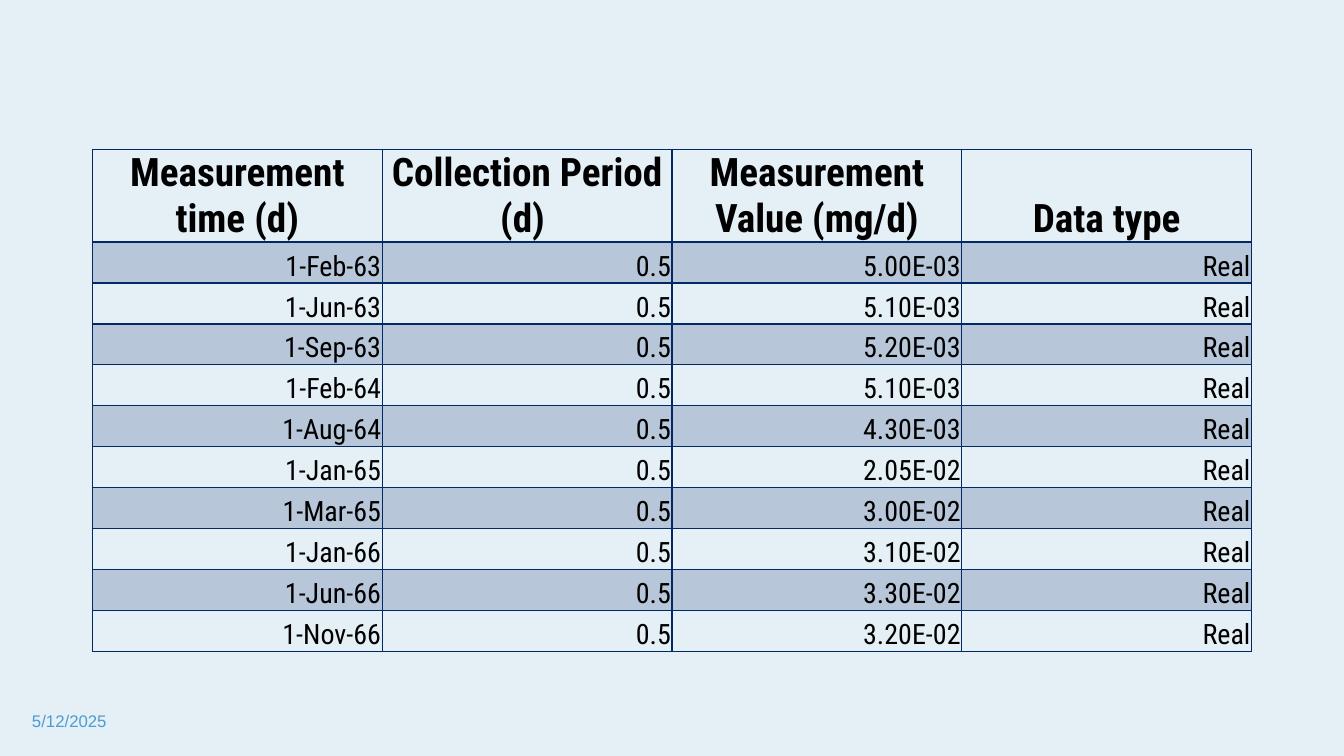
import dataclasses

import lxml.etree
import pptx
import pptx.dml.color
import pptx.enum.text
import pptx.oxml
import pptx.oxml.ns
import pptx.util

Pt = pptx.util.Pt
Align = pptx.enum.text.PP_ALIGN
Anchor = pptx.enum.text.MSO_ANCHOR


@dataclasses.dataclass(frozen=True)
class Theme:
    background: str = "E5EFF6"
    navy: str = "002966"
    text: str = "000000"
    date: str = "4B9CD3"
    table_font: str = "Roboto Condensed"
    date_font: str = "Arial"
    header_size: int = 28
    body_size: int = 20
    date_size: int = 12
    band_opacity: int = 20


def color(code):
    return pptx.dml.color.RGBColor.from_string(code)


class PageBuilder:
    def __init__(self, page, theme):
        self.page = page
        self.theme = theme
        page.background.fill.solid()
        page.background.fill.fore_color.rgb = color(theme.background)

    def style(self, para, font, size, code, bold=False):
        for span in para.runs:
            span.font.name = font
            span.font.size = Pt(size)
            span.font.bold = bold
            span.font.color.rgb = color(code)

    def text(self, words, left, top, width, height):
        box = self.page.shapes.add_textbox(Pt(left), Pt(top), Pt(width), Pt(height))
        frame = box.text_frame
        frame.word_wrap = True
        frame.vertical_anchor = Anchor.MIDDLE
        frame.text = words
        self.style(frame.paragraphs[0], self.theme.date_font,
                   self.theme.date_size, self.theme.date)

    def borders(self, cell, widths):
        properties = cell._tc.get_or_add_tcPr()
        for position, (side, width) in enumerate(widths.items()):
            line = pptx.oxml.parse_xml(
                f'<a:ln{side} {pptx.oxml.ns.nsdecls("a")} w="{Pt(width)}">'
                f'<a:solidFill><a:srgbClr val="{self.theme.navy}"/></a:solidFill>'
                f'</a:ln{side}>')
            properties.insert(position, line)

    def band(self, cell):
        cell.fill.solid()
        cell.fill.fore_color.rgb = color(self.theme.navy)
        tint = cell._tc.tcPr.find(".//" + pptx.oxml.ns.qn("a:srgbClr"))
        alpha = lxml.etree.SubElement(tint, pptx.oxml.ns.qn("a:alpha"))
        alpha.set("val", str(self.theme.band_opacity * 1000))

    def cell(self, cell, words, row):
        header = row == 0
        cell.text = words
        cell.vertical_anchor = Anchor.BOTTOM
        cell.margin_left = cell.margin_right = cell.margin_top = Pt(0.75)
        cell.margin_bottom = 0
        para = cell.text_frame.paragraphs[0]
        para.alignment = Align.CENTER if header else Align.RIGHT
        size = self.theme.header_size if header else self.theme.body_size
        self.style(para, self.theme.table_font, size, self.theme.text, header)
        if row % 2:
            self.band(cell)
        else:
            cell.fill.background()
        self.borders(cell, {"L": 1, "R": 1, "T": 2 if row == 1 else 1,
                            "B": 2 if header else 1})

    def table(self, rows, left, top, column_width, header_height, row_height):
        columns = len(rows[0])
        height = header_height + row_height * (len(rows) - 1)
        table = self.page.shapes.add_table(
            len(rows), columns, Pt(left), Pt(top),
            Pt(column_width * columns), Pt(height)).table
        table.first_row = table.horz_banding = False
        for column in table.columns:
            column.width = Pt(column_width)
        for number, values in enumerate(rows):
            table.rows[number].height = Pt(row_height if number else header_height)
            for column, words in enumerate(values):
                self.cell(table.cell(number, column), words, number)


HEADERS = ("Measurement time (d)", "Collection Period (d) ",
           "Measurement Value (mg/d)", "Data type")
MEASUREMENTS = (
    ("1-Feb-63", "5.00E-03"),
    ("1-Jun-63", "5.10E-03"),
    ("1-Sep-63", "5.20E-03"),
    ("1-Feb-64", "5.10E-03"),
    ("1-Aug-64", "4.30E-03"),
    ("1-Jan-65", "2.05E-02"),
    ("1-Mar-65", "3.00E-02"),
    ("1-Jan-66", "3.10E-02"),
    ("1-Jun-66", "3.30E-02"),
    ("1-Nov-66", "3.20E-02"),
)


def main():
    deck = pptx.Presentation()
    deck.slide_width, deck.slide_height = Pt(960), Pt(540)
    builder = PageBuilder(deck.slides.add_slide(deck.slide_layouts[6]), Theme())

    # Measurement table
    rows = [HEADERS] + [(day, "0.5", value, "Real") for day, value in MEASUREMENTS]
    builder.table(rows, left=66, top=106.6, column_width=207,
                  header_height=66, row_height=29.25)

    # Date
    builder.text("5/12/2025", left=15.8, top=500.4, width=216, height=28.8)

    deck.save("out.pptx")


if __name__ == "__main__":
    main()
